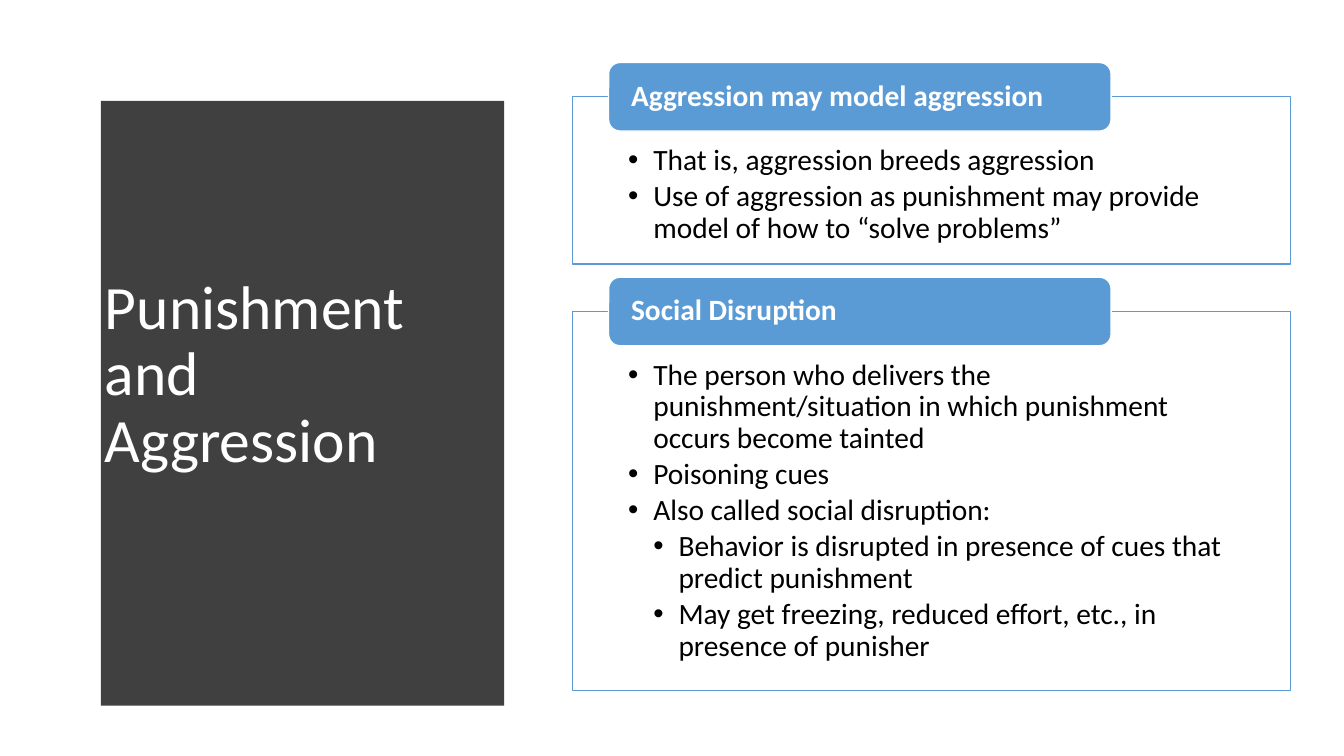
from lxml.etree import SubElement
from pptx import Presentation
from pptx.dml.color import RGBColor
from pptx.enum.shapes import MSO_SHAPE as Shape
from pptx.enum.text import MSO_ANCHOR as Anchor, PP_ALIGN as Align
from pptx.oxml.ns import qn
from pptx.util import Inches, Pt

WIDTH, HEIGHT = 13.33, 7.5
FONT = "Calibri"
BLUE, WHITE, BLACK, CHARCOAL = "5B9BD5", "FFFFFF", "000000", "404040"
TAB_HEIGHT, SECTION_GAP = 0.68, 0.13
BULLET_STEP = 0.25
SECTIONS = [
    ("Aggression may model aggression", 1.66, [
        (1, "That is, aggression breeds aggression"),
        (1, "Use of aggression as punishment may provide model of how to “solve problems”"),
    ]),
    ("Social Disruption", 3.76, [
        (1, "The person who delivers the punishment/situation in which punishment occurs become tainted"),
        (1, "Poisoning cues"),
        (1, "Also called social disruption:"),
        (2, "Behavior is disrupted in presence of cues that predict punishment"),
        (2, "May get freezing, reduced effort, etc., in presence of punisher"),
    ]),
]


def color(hex_code):
    """Turn a hex string into a colour."""
    return RGBColor.from_string(hex_code)


def style_paragraph(paragraph, size, hex_code, bold=False):
    """Format a paragraph and its runs."""
    paragraph.alignment = Align.LEFT
    paragraph.line_spacing = 0.9
    for run in paragraph.runs:
        run.font.name = FONT
        run.font.size = Pt(size)
        run.font.bold = bold
        run.font.color.rgb = color(hex_code)


def set_insets(frame, side, top=0, bottom=0):
    """Set a text frame's margins and turn wrapping on."""
    frame.word_wrap = True
    frame.margin_left = frame.margin_right = Inches(side)
    frame.margin_top, frame.margin_bottom = Inches(top), Inches(bottom)


def add_block(slide, kind, box, fill, outline):
    """Add a filled and outlined shape."""
    block = slide.shapes.add_shape(kind, *map(Inches, box))
    block.shadow.inherit = False
    block.fill.solid()
    block.fill.fore_color.rgb = color(fill)
    block.line.color.rgb = color(outline)
    block.line.width = Pt(1)
    return block


def add_bullet(paragraph, level):
    """Give a paragraph a hanging bullet at its level."""
    paragraph.level = level
    paragraph.space_after = Pt(3)
    properties = paragraph._p.get_or_add_pPr()
    properties.set("marL", str(Inches(BULLET_STEP * level)))
    properties.set("indent", str(-Inches(BULLET_STEP)))
    SubElement(properties, qn("a:buFont"), typeface="Arial")
    SubElement(properties, qn("a:buChar"), char="•")


def add_title_panel(slide, left, top, width, height):
    """Draw the dark panel with a bowed right edge and set the title on it."""
    bow, steps = 0.05 * width, 40
    edge = []
    for step in range(steps + 1):
        share = step / steps
        x = left + width - bow * (2 * share - 1) ** 2
        edge.append((x, top + height * share))
    builder = slide.shapes.build_freeform(left, top, scale=Inches(1))
    builder.add_line_segments(edge + [(left, top + height)], close=True)
    panel = builder.convert_to_shape()
    panel.shadow.inherit = False
    panel.fill.solid()
    panel.fill.fore_color.rgb = color(CHARCOAL)
    panel.line.fill.background()

    title = slide.shapes.title
    panel._element.addnext(title._element)
    title.left, title.top = Inches(left + 0.41), Inches(top + 0.59)
    title.width, title.height = Inches(0.78 * width), Inches(height - 1.2)
    title.text_frame.text = "Punishment and Aggression"
    title.text_frame.vertical_anchor = Anchor.MIDDLE
    set_insets(title.text_frame, 0.1, 0.05, 0.05)
    style_paragraph(title.text_frame.paragraphs[0], 44, WHITE)


def add_section(slide, heading, points, left, top, width, height):
    """Draw a framed bullet list with a heading tab over its top edge."""
    frame = add_block(slide, Shape.RECTANGLE, (left, top, width, height), WHITE, BLUE)
    body = frame.text_frame
    body.text = "\n".join(text for _, text in points)
    body.vertical_anchor = Anchor.TOP
    set_insets(body, 0.55, 0.48, 0.16)
    for paragraph, (level, _) in zip(body.paragraphs, points):
        style_paragraph(paragraph, 21, BLACK)
        add_bullet(paragraph, level)

    tab_box = (left + 0.05 * width, top - TAB_HEIGHT / 2, 0.7 * width, TAB_HEIGHT)
    tab = add_block(slide, Shape.ROUNDED_RECTANGLE, tab_box, BLUE, WHITE)
    tab.text_frame.text = heading
    tab.text_frame.vertical_anchor = Anchor.MIDDLE
    set_insets(tab.text_frame, 0.19)
    style_paragraph(tab.text_frame.paragraphs[0], 21, WHITE, bold=True)


def add_sections(slide, left, top, width):
    """Stack the sections downwards with equal gaps."""
    for heading, height, points in SECTIONS:
        add_section(slide, heading, points, left, top, width, height)
        top += height + SECTION_GAP + TAB_HEIGHT / 2


def main():
    """Build and save the slide."""
    deck = Presentation()
    deck.slide_width, deck.slide_height = Inches(WIDTH), Inches(HEIGHT)
    slide = deck.slides.add_slide(deck.slide_layouts.get_by_name("Title Only"))
    add_title_panel(slide, 0.53, 0.52, 4.79, 6.44)
    add_sections(slide, 5.68, 0.96, 7.12)
    deck.save("out.pptx")


if __name__ == "__main__":
    main()
